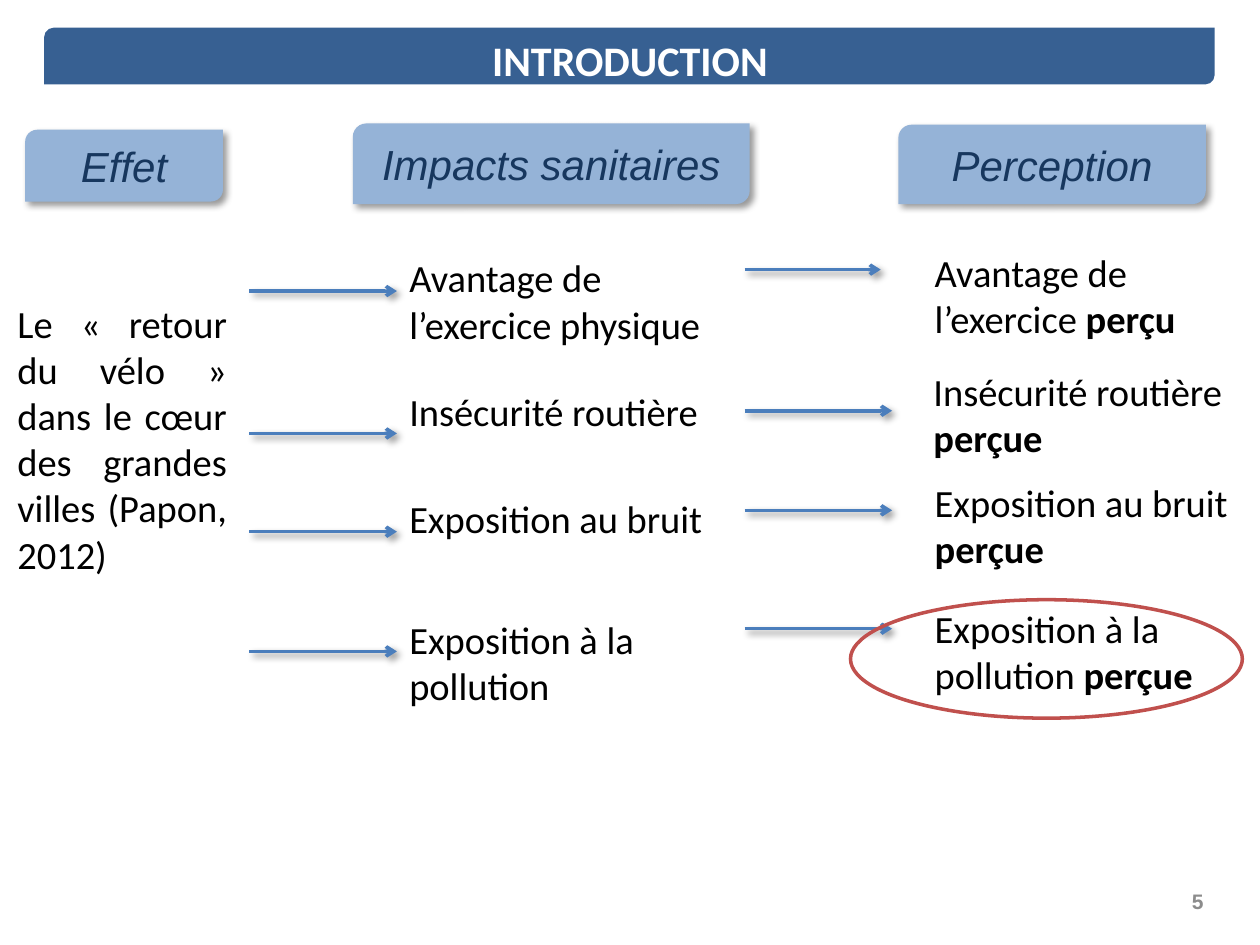
from lxml import etree
from pptx import Presentation
from pptx.dml.color import RGBColor
from pptx.enum import shapes, text
from pptx.oxml.ns import qn
from pptx.util import Inches, Pt

COLORS = {
    "banner": "376092", "header": "95B3D7", "header text": "17375E",
    "arrow": "4B7EBC", "highlight": "C0504D", "body": "000000",
    "title": "FFFFFF", "number": "8C8C8C", "shadow": "000000",
}

TITLE = "INTRODUCTION"
PAGE_NUMBER = "5"
EFFECT = "Le « retour du vélo » dans le cœur des grandes villes (Papon, 2012)"

# label, left, top, width, height
HEADERS = [
    ("Effet", 0.2, 1.03, 1.57, 0.57),
    ("Impacts sanitaires", 2.8, 0.98, 3.15, 0.64),
    ("Perception", 7.13, 0.99, 2.44, 0.63),
]

# text, top, width, height
IMPACTS = [
    ("Avantage de\nl’exercice physique", 1.97, 4.49, 0.84),
    ("Insécurité routière", 3.03, 2.93, 0.47),
    ("Exposition au bruit", 3.88, 2.93, 0.47),
    ("Exposition à la\npollution", 4.84, 3.52, 0.84),
]

# text, bold ending, left, top
PERCEPTIONS = [
    ("Avantage de\nl’exercice ", "perçu", 7.32, 1.93),
    ("Insécurité routière\n", "perçue", 7.31, 2.87),
    ("Exposition au bruit\n", "perçue", 7.32, 3.75),
    ("Exposition à la pollution ", "perçue", 7.32, 4.75),
]

# start, end, heights of the arrows
EFFECT_ARROWS = (1.98, 3.15, [2.31, 3.44, 4.22, 5.17])
IMPACT_ARROWS = (5.91, 7.08, [2.14, 3.26, 4.05, 4.99])
FIRST_IMPACT_ARROW_END = 6.99

ALIGN = text.PP_ALIGN
ANCHOR = text.MSO_ANCHOR


def rgb(name):
    return RGBColor.from_string(COLORS[name])


def place(part, left, top, width, height):
    part.left, part.top = Inches(left), Inches(top)
    part.width, part.height = Inches(width), Inches(height)


def write(part, words, bold_ending="", size=22, font="Calibri", color="body",
          bold=False, italic=False, align=ALIGN.LEFT, anchor=ANCHOR.TOP):
    """Fill a box; each newline in words becomes a line break."""
    frame = part.text_frame
    frame.word_wrap = True
    frame.auto_size = text.MSO_AUTO_SIZE.NONE
    frame.vertical_anchor = anchor
    paragraph = frame.paragraphs[0]
    paragraph.alignment = align

    def add_run(content, is_bold):
        run = paragraph.add_run()
        run.text = content
        run.font.size, run.font.name = Pt(size), font
        run.font.bold, run.font.italic = is_bold, italic
        run.font.color.rgb = rgb(color)

    for index, line in enumerate(words.split("\n")):
        if index:
            paragraph.add_line_break()
        if line:
            add_run(line, bold)
    if bold_ending:
        add_run(bold_ending, True)


def add_text(slide, words, box, **style):
    part = slide.shapes.add_textbox(*map(Inches, box))
    write(part, words, **style)


def add_shadow(part):
    effects = etree.SubElement(part._element.spPr, qn("a:effectLst"))
    shadow = etree.SubElement(
        effects, qn("a:outerShdw"), blurRad=str(Pt(4)), dist=str(Pt(3)),
        dir="2700000", algn="tl", rotWithShape="0")
    color = etree.SubElement(shadow, qn("a:srgbClr"), val=COLORS["shadow"])
    etree.SubElement(color, qn("a:alpha"), val="40000")


def add_panel(slide, box, color):
    panel = slide.shapes.add_shape(
        shapes.MSO_SHAPE.ROUND_2_DIAG_RECTANGLE, *map(Inches, box))
    panel.shadow.inherit = False
    panel.fill.solid()
    panel.fill.fore_color.rgb = rgb(color)
    panel.line.fill.background()
    return panel


def add_arrow(slide, start, end, y):
    arrow = slide.shapes.add_connector(
        shapes.MSO_CONNECTOR.STRAIGHT, *map(Inches, (start, y, end, y)))
    arrow.line.color.rgb = rgb("arrow")
    arrow.line.width = Pt(2)
    etree.SubElement(arrow.line._get_or_add_ln(), qn("a:tailEnd"), type="arrow")
    add_shadow(arrow)


def add_header(slide, label, *box):
    panel = add_panel(slide, box, "header")
    panel._element.spPr.remove(panel._element.spPr.find(qn("a:effectLst")))
    add_shadow(panel)
    left, top, width, height = box
    label_height = 0.5
    add_text(slide, label,
             (left, top + (height - label_height) / 2, width, label_height),
             size=24, font="Arial", color="header text", italic=True,
             align=ALIGN.CENTER)


def main():
    deck = Presentation()
    deck.slide_width, deck.slide_height = Inches(10), Inches(7.5)
    slide = deck.slides.add_slide(deck.slide_layouts[5])

    banner = add_panel(slide, (0.35, 0.22, 9.29, 0.45), "banner")
    title = slide.shapes.title
    banner._element.addnext(title._element)
    place(title, 3.6, 0.22, 2.8, 0.44)
    write(title, TITLE, size=24, color="title", bold=True, align=ALIGN.CENTER)

    for header in HEADERS:
        add_header(slide, *header)

    add_text(slide, EFFECT, (0.04, 2.33, 1.86, 2.73), align=ALIGN.JUSTIFY)
    for words, top, width, height in IMPACTS:
        add_text(slide, words, (3.15, top, width, height))

    start, end, heights = EFFECT_ARROWS
    for y in heights:
        add_arrow(slide, start, end, y)
    start, end, heights = IMPACT_ARROWS
    for row, y in enumerate(heights):
        add_arrow(slide, start, end if row else FIRST_IMPACT_ARROW_END, y)

    highlight = slide.shapes.add_shape(
        shapes.MSO_SHAPE.OVAL, *map(Inches, (6.75, 4.76, 3.11, 0.94)))
    highlight.shadow.inherit = False
    highlight.fill.background()
    highlight.line.color.rgb = rgb("highlight")
    highlight.line.width = Pt(2)

    for words, ending, left, top in PERCEPTIONS:
        add_text(slide, words, (left, top, 10 - left, 0.84), bold_ending=ending)

    add_text(slide, PAGE_NUMBER, (6.97, 6.95, 2.68, 0.4), size=12, font="Arial",
             color="number", bold=True, align=ALIGN.RIGHT, anchor=ANCHOR.MIDDLE)

    deck.save("out.pptx")


if __name__ == "__main__":
    main()
